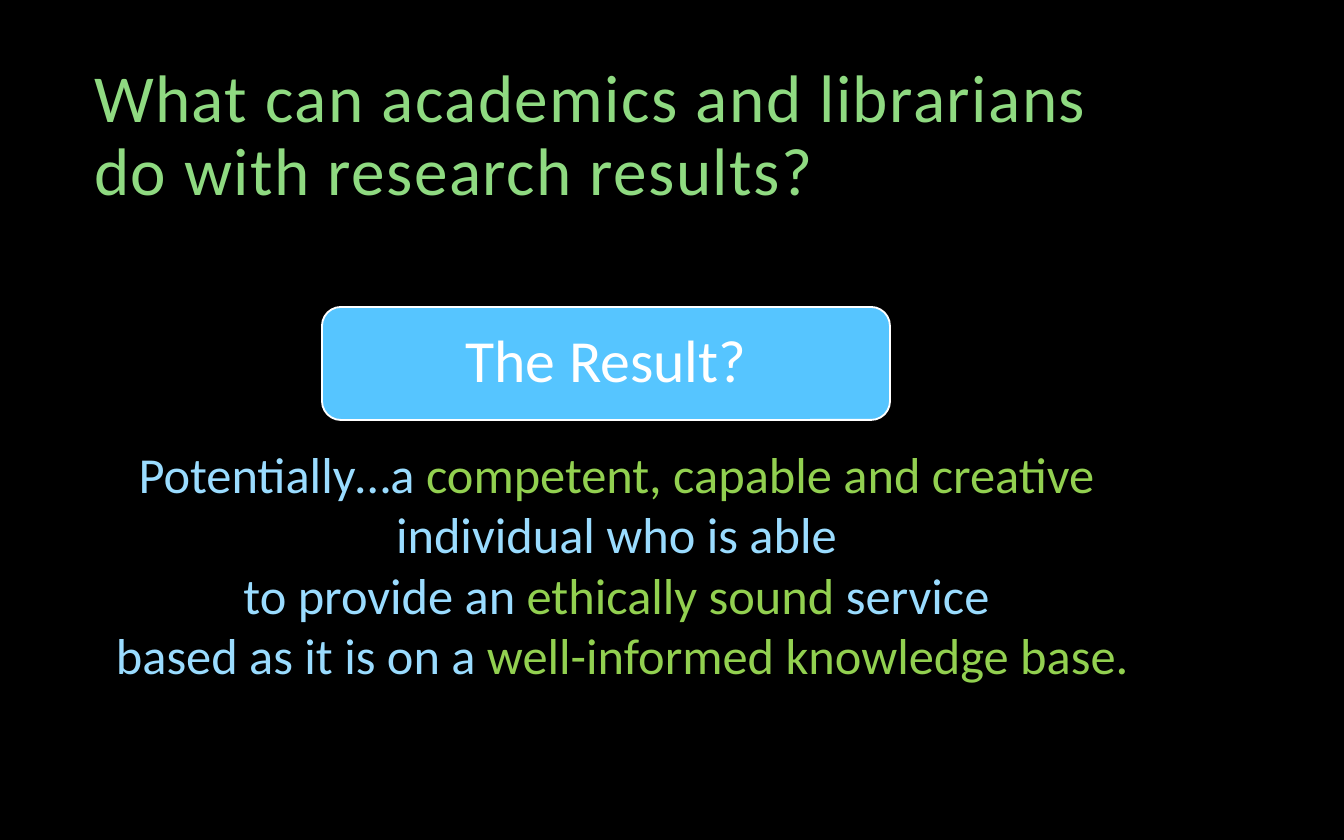
from pptx import Presentation
from pptx.dml.color import RGBColor
from pptx.enum.shapes import MSO_SHAPE
from pptx.enum.text import MSO_ANCHOR, MSO_AUTO_SIZE, PP_ALIGN
from pptx.util import Emu, Pt

EMU_PER_PX = 914400 / 134.4
FONT = "Calibri"
BLACK = RGBColor(0x00, 0x00, 0x00)
WHITE = RGBColor(0xFF, 0xFF, 0xFF)
TITLE_GREEN = RGBColor(0x8F, 0xDA, 0x81)
ACCENT_GREEN = RGBColor(0x92, 0xD0, 0x50)
PALE_BLUE = RGBColor(0x9A, 0xDC, 0xFF)
BUTTON_BLUE = RGBColor(0x56, 0xC5, 0xFF)

ANSWER = [
    [
        ("Potentially…a ", PALE_BLUE),
        ("competent, capable and creative ", ACCENT_GREEN),
        ("individual who is able", PALE_BLUE),
    ],
    [
        ("to provide an ", PALE_BLUE),
        ("ethically sound ", ACCENT_GREEN),
        ("service", PALE_BLUE),
    ],
    [
        (" based as it is on a ", PALE_BLUE),
        ("well-informed knowledge base.", ACCENT_GREEN),
    ],
]


def px(length):
    return Emu(round(length * EMU_PER_PX))


def format_run(run, size, color):
    run.font.name = FONT
    run.font.size = Pt(size)
    run.font.color.rgb = color


def set_frame(text_frame, anchor, horizontal_inset, vertical_inset):
    text_frame.word_wrap = True
    text_frame.auto_size = MSO_AUTO_SIZE.NONE
    text_frame.vertical_anchor = anchor
    text_frame.margin_left = text_frame.margin_right = px(horizontal_inset)
    text_frame.margin_top = text_frame.margin_bottom = px(vertical_inset)


def add_title(slide, text, left, top, width, height):
    title = slide.shapes.title
    title.left, title.top = px(left), px(top)
    title.width, title.height = px(width), px(height)
    set_frame(title.text_frame, MSO_ANCHOR.BOTTOM, 10, 5)
    title.text_frame.text = text
    paragraph = title.text_frame.paragraphs[0]
    paragraph.alignment = PP_ALIGN.LEFT
    paragraph.line_spacing = 0.9
    run = paragraph.runs[0]
    format_run(run, 36, TITLE_GREEN)
    run._r.get_or_add_rPr().set("spc", "80")


def add_button(slide, text, left, top, width, height):
    button = slide.shapes.add_shape(
        MSO_SHAPE.ROUNDED_RECTANGLE, px(left), px(top), px(width), px(height)
    )
    button.shadow.inherit = False
    button.fill.solid()
    button.fill.fore_color.rgb = BUTTON_BLUE
    button.line.color.rgb = WHITE
    button.line.width = Pt(1)
    set_frame(button.text_frame, MSO_ANCHOR.MIDDLE, 17, 17)
    button.text_frame.text = text
    paragraph = button.text_frame.paragraphs[0]
    paragraph.alignment = PP_ALIGN.CENTER
    paragraph.line_spacing = 0.9
    format_run(paragraph.runs[0], 32, WHITE)


def add_colored_text(slide, lines, left, top, width, height):
    box = slide.shapes.add_textbox(px(left), px(top), px(width), px(height))
    text_frame = box.text_frame
    set_frame(text_frame, MSO_ANCHOR.TOP, 10, 5)
    for index, line in enumerate(lines):
        paragraph = text_frame.add_paragraph() if index else text_frame.paragraphs[0]
        paragraph.alignment = PP_ALIGN.CENTER
        for text, color in line:
            run = paragraph.add_run()
            run.text = text
            format_run(run, 27, color)


def main():
    presentation = Presentation()
    presentation.slide_width = px(1344)
    presentation.slide_height = px(840)
    slide = presentation.slides.add_slide(presentation.slide_layouts[5])
    slide.background.fill.solid()
    slide.background.fill.fore_color.rgb = BLACK

    add_title(
        slide,
        "What can academics and librarians do with research results?",
        84, 47, 1092, 168,
    )
    add_colored_text(slide, ANSWER, 77, 438, 1079, 254)
    add_button(slide, "The Result?", 322, 307, 568, 113)

    presentation.save("out.pptx")


if __name__ == "__main__":
    main()
